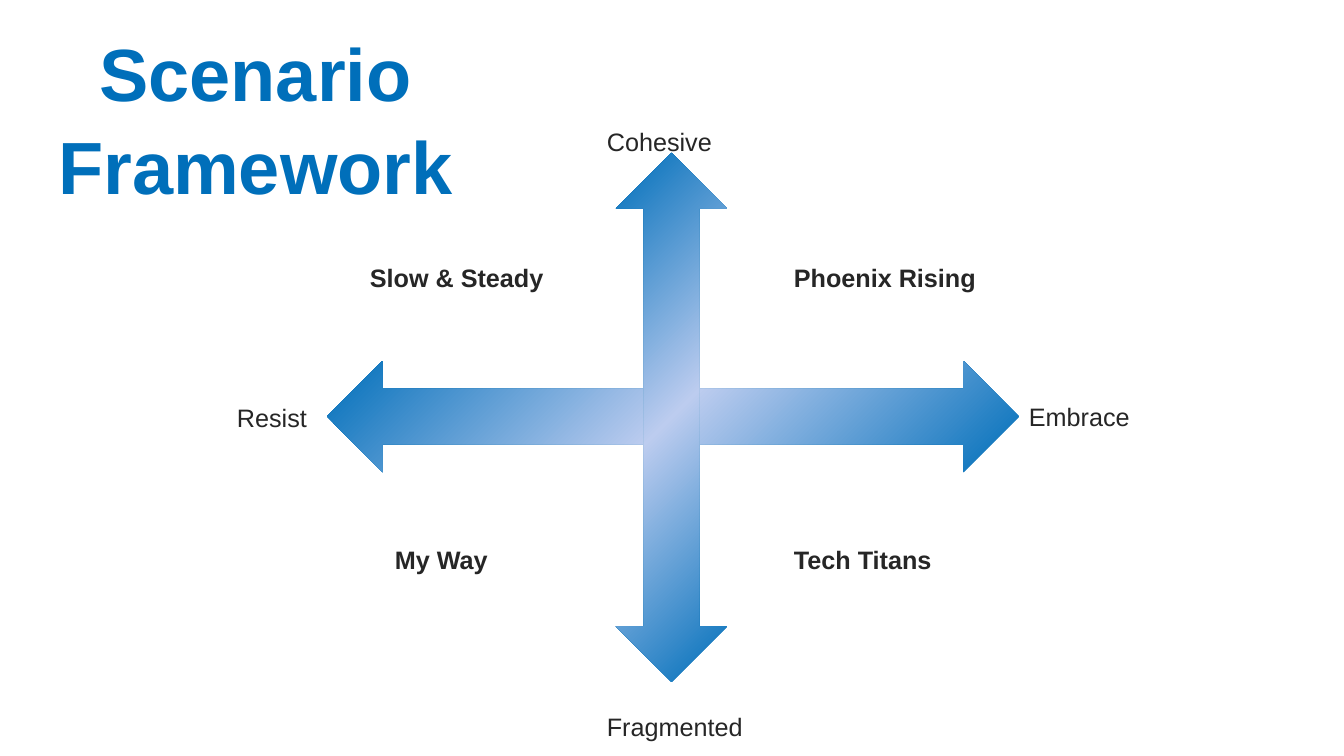
import copy

import pptx
import pptx.dml.color
import pptx.enum.text
import pptx.enum.shapes
import pptx.util

# Content: lengths in px
SLIDE_SIZE = (1344, 756)
TITLE = ("Scenario Framework", (-72, 25, 655, 184))

# text, box (left, top, width, height), wraps
AXIS_ENDS = [
    ("Cohesive", (597, 121, 175, 72), True),
    ("Fragmented", (597, 706, 175, 72), True),
    ("Resist", (227, 397, 91, 40), False),
    ("Embrace", (1019, 396, 122, 40), False),
]
SCENARIOS = [
    ("Slow & Steady", (360, 257, 196, 40), False),
    ("Phoenix Rising", (784, 257, 205, 40), False),
    ("Tech Titans", (784, 539, 159, 40), False),
    ("My Way", (385, 539, 114, 40), False),
]

# box before rotation, rotation, gradient angle that keeps the shading diagonal
ARROWS = [
    ((327, 361, 692, 111), 0, 315),
    ((407, 362, 529, 111), 90, 45),
]

THEME = {
    "font": "Arial",
    "title_size": 52.8,
    "label_size": 18,
    "title": pptx.dml.color.RGBColor.from_string("006FBA"),
    "text": pptx.dml.color.RGBColor.from_string("262626"),
    "arrow_stops": [(0, "006FBA"), (0.5, "BCCCEF"), (1, "006FBA")],
}
EMU_PER_PX = 914400 / 100.8


def emu(px):
    return round(px * EMU_PER_PX)


def set_attributes(target, values):
    for name, value in values.items():
        setattr(target, name, value)


def write_text(shape, text, size, color, bold, frame_format):
    set_attributes(shape.text_frame, frame_format)
    paragraph = shape.text_frame.paragraphs[0]
    run = paragraph.add_run()
    run.text = text
    set_attributes(run.font, {"name": THEME["font"], "size": pptx.util.Pt(size), "bold": bold})
    run.font.color.rgb = color
    return paragraph


def add_label(slide, text, box, wraps, bold):
    label = slide.shapes.add_textbox(*map(emu, box))
    write_text(label, text, THEME["label_size"], THEME["text"], bold, {"word_wrap": wraps})


def add_arrow(slide, box, rotation, angle):
    arrow = slide.shapes.add_shape(
        pptx.enum.shapes.MSO_SHAPE.LEFT_RIGHT_ARROW, *map(emu, box))
    arrow.rotation = rotation
    arrow.shadow.inherit = False
    arrow.line.fill.background()
    arrow.fill.gradient()
    arrow.fill.gradient_angle = angle
    # The default gradient has two stops; add the middle one
    stop_list = arrow.fill._fill._gradFill.gsLst
    stop_list.insert(1, copy.deepcopy(stop_list[0]))
    for stop, (position, color) in zip(arrow.fill.gradient_stops, THEME["arrow_stops"]):
        stop.position = position
        stop.color.rgb = pptx.dml.color.RGBColor.from_string(color)


def main():
    presentation = pptx.Presentation()
    presentation.slide_width, presentation.slide_height = map(emu, SLIDE_SIZE)
    slide = presentation.slides.add_slide(presentation.slide_layouts[5])

    # Title
    text, box = TITLE
    title = slide.shapes.title
    set_attributes(title, dict(zip(("left", "top", "width", "height"), map(emu, box))))
    paragraph = write_text(title, text, THEME["title_size"], THEME["title"], True, {
        "word_wrap": True,
        "auto_size": pptx.enum.text.MSO_AUTO_SIZE.NONE,
        "vertical_anchor": pptx.enum.text.MSO_ANCHOR.BOTTOM,
        "margin_top": 0,
        "margin_bottom": 0,
    })
    set_attributes(paragraph, {
        "alignment": pptx.enum.text.PP_ALIGN.CENTER, "line_spacing": 1.05})

    # Labels
    for labels, bold in ((AXIS_ENDS, False), (SCENARIOS, True)):
        for text, box, wraps in labels:
            add_label(slide, text, box, wraps, bold)

    # Crossed arrows
    for arrow in ARROWS:
        add_arrow(slide, *arrow)

    presentation.save("out.pptx")


if __name__ == "__main__":
    main()
